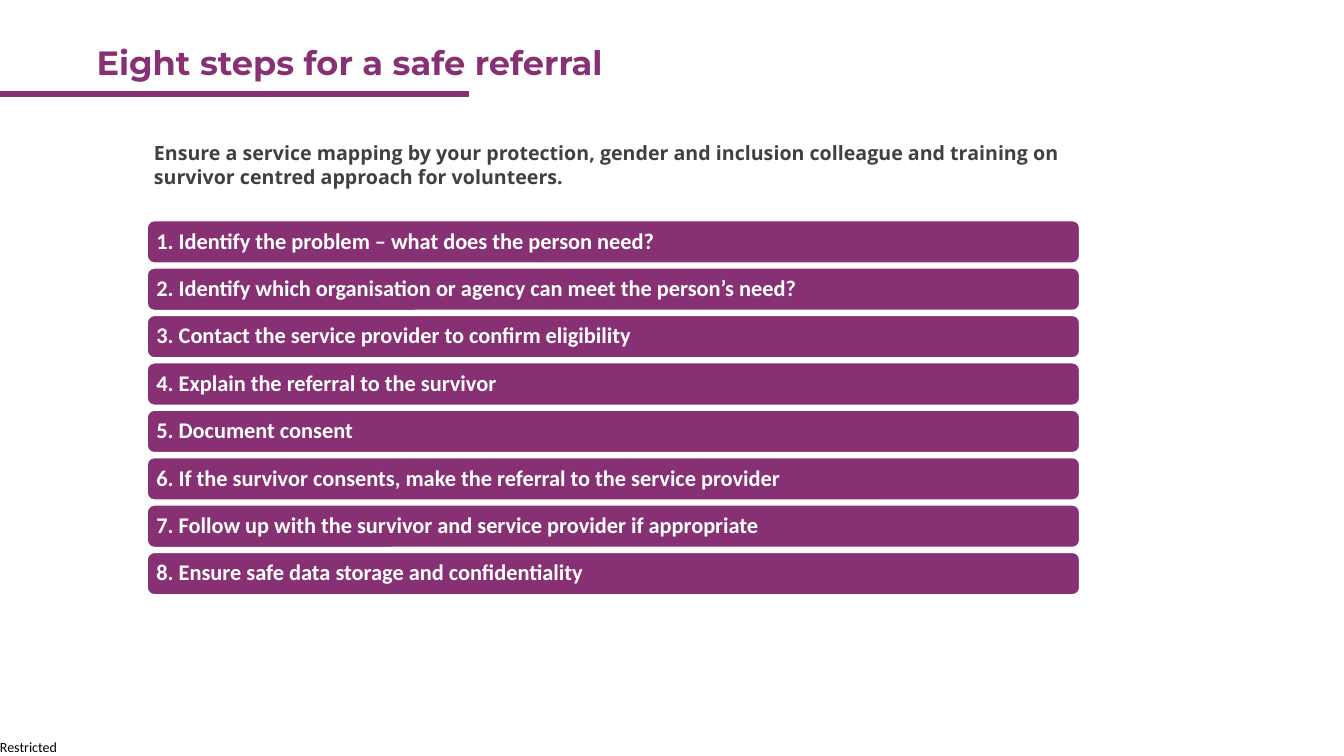
from pptx import Presentation
from pptx.dml.color import RGBColor
from pptx.enum import shapes, text
from pptx.util import Cm, Pt

PURPLE = RGBColor(0x87, 0x31, 0x74)
GREY = RGBColor(0x40, 0x40, 0x40)
WHITE = RGBColor(0xFF, 0xFF, 0xFF)
BLACK = RGBColor(0, 0, 0)

TITLE = "Eight steps for a safe referral"
INTRO = ("Ensure a service mapping by your protection, gender and inclusion colleague "
         "and training on survivor centred approach for volunteers.")
STEPS = [
    "Identify the problem – what does the person need?",
    "Identify which organisation or agency can meet the person’s need?",
    "Contact the service provider to confirm eligibility",
    "Explain the referral to the survivor",
    "Document consent",
    "If the survivor consents, make the referral to the service provider",
    "Follow up with the survivor and service provider if appropriate",
    "Ensure safe data storage and confidentiality",
]
LABEL = "Restricted"

TITLE_FONT = {"name": "Montserrat", "size": Pt(24), "bold": True}
INTRO_FONT = {"name": "Open Sans", "size": Pt(14), "bold": True}
STEP_FONT = {"name": "Calibri", "size": Pt(16), "bold": True}
LABEL_FONT = {"name": "Calibri", "size": Pt(10), "bold": False}

STEP_LEFT, STEP_WIDTH, STEP_HEIGHT = 3.71, 23.5, 1.07
FIRST_TOP, LAST_TOP = 5.56, 13.92


def write(shape, words, font, color, anchor=text.MSO_ANCHOR.TOP, inset=None):
    frame = shape.text_frame
    frame.word_wrap = True
    frame.vertical_anchor = anchor
    if inset is not None:
        for side in ("left", "top", "right", "bottom"):
            setattr(frame, f"margin_{side}", Cm(inset))
    para = frame.paragraphs[0]
    para.alignment = text.PP_ALIGN.LEFT
    span = para.add_run()
    span.text = words
    for key, value in font.items():
        setattr(span.font, key, value)
    span.font.color.rgb = color
    return para


def add_block(slide, kind, place, line_color):
    block = slide.shapes.add_shape(kind, *map(Cm, place))
    block.shadow.inherit = False
    block.fill.solid()
    block.fill.fore_color.rgb = PURPLE
    block.line.color.rgb = line_color
    block.line.width = Pt(1)
    return block


def build():
    deck = Presentation()
    deck.slide_width, deck.slide_height = Cm(33.87), Cm(19.05)
    slide = deck.slides.add_slide(deck.slide_layouts[5])

    title = slide.shapes.title
    title.left, title.top, title.width, title.height = map(Cm, (2.18, 0.94, 28.6, 1.27))
    write(title, TITLE, TITLE_FONT, PURPLE)

    label = slide.shapes.add_textbox(*map(Cm, (0, 18.62, 1.8, 0.43)))
    write(label, LABEL, LABEL_FONT, BLACK, inset=0)
    intro = slide.shapes.add_textbox(*map(Cm, (3.63, 3.43, 23.5, 1.45)))
    write(intro, INTRO, INTRO_FONT, GREY)

    add_block(slide, shapes.MSO_SHAPE.RECTANGLE, (0, 2.3, 11.81, 0.13), PURPLE)

    pitch = (LAST_TOP - FIRST_TOP) / (len(STEPS) - 1)
    for index, step in enumerate(STEPS):
        place = (STEP_LEFT, FIRST_TOP + index * pitch, STEP_WIDTH, STEP_HEIGHT)
        bar = add_block(slide, shapes.MSO_SHAPE.ROUNDED_RECTANGLE, place, WHITE)
        para = write(bar, f"{index + 1}. {step}", STEP_FONT, WHITE,
                     text.MSO_ANCHOR.MIDDLE, inset=0.18)
        para.line_spacing = 0.9

    deck.save("out.pptx")


if __name__ == "__main__":
    build()
